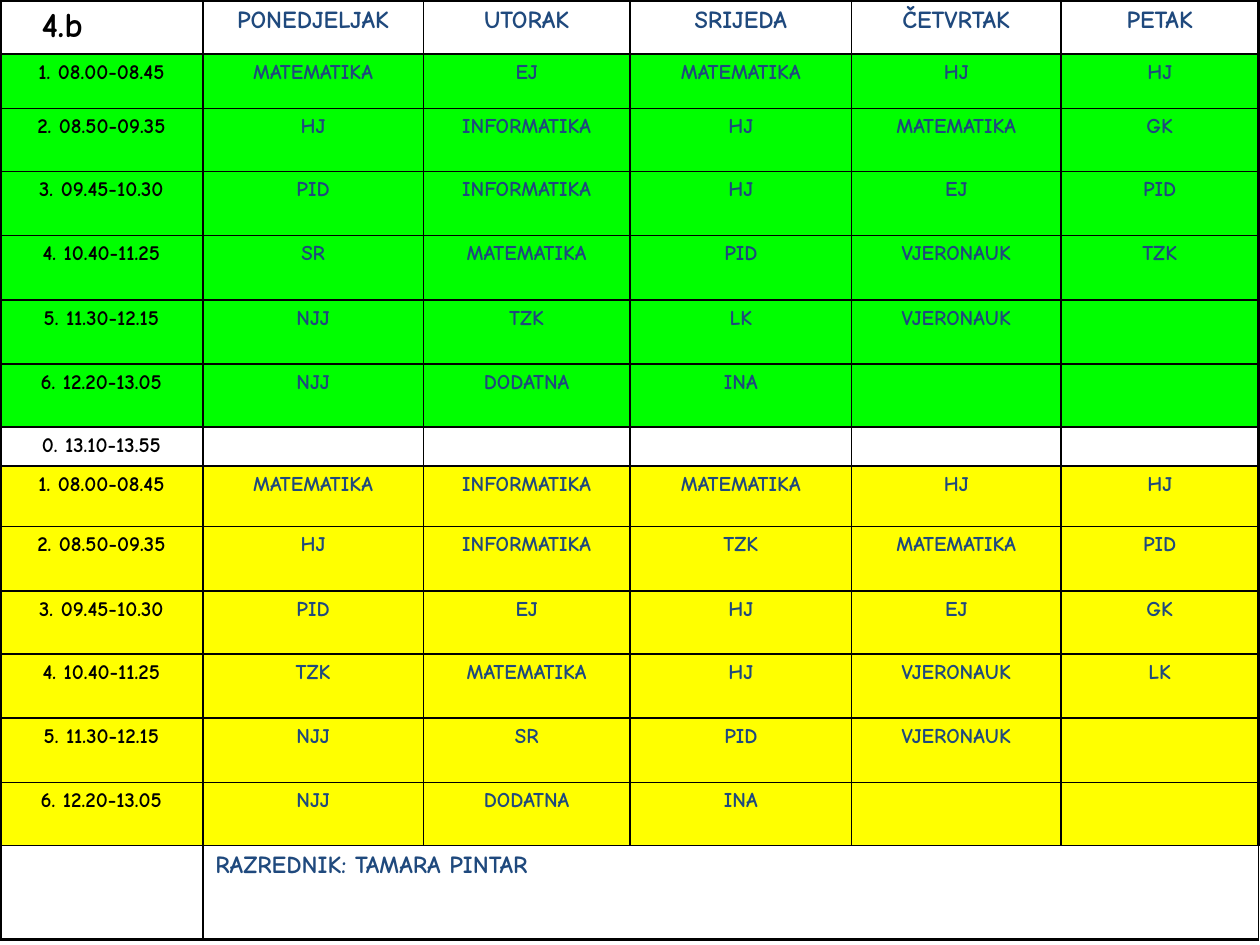
from pptx import Presentation
from pptx.dml.color import RGBColor
from pptx.enum.text import PP_ALIGN as Align
from pptx.oxml.ns import qn
from pptx.util import Inches, Pt
from lxml.etree import SubElement, Element

FONT = "Comic Neue"
COLORS = {"black": "000000", "blue": "1F497D", "green": "00FF00", "yellow": "FFFF00"}
CLASS_NAME = "4.b"
TEACHER = "RAZREDNIK: TAMARA PINTAR"
DAYS = ["PONEDJELJAK", "UTORAK", "SRIJEDA", "ČETVRTAK", "PETAK"]
PERIODS = ["1. 08.00-08.45", "2. 08.50-09.35", "3. 09.45-10.30",
           "4. 10.40-11.25", "5. 11.30-12.15", "6. 12.20-13.05"]
BREAK_PERIOD = "0. 13.10-13.55"
GREEN_WEEK = [
    ["MATEMATIKA", "EJ", "MATEMATIKA", "HJ", "HJ"],
    ["HJ", "INFORMATIKA", "HJ", "MATEMATIKA", "GK"],
    ["PID", "INFORMATIKA", "HJ", "EJ", "PID"],
    ["SR", "MATEMATIKA", "PID", "VJERONAUK", "TZK"],
    ["NJJ", "TZK", "LK", "VJERONAUK", ""],
    ["NJJ", "DODATNA", "INA", "", ""],
]
YELLOW_WEEK = [
    ["MATEMATIKA", "INFORMATIKA", "MATEMATIKA", "HJ", "HJ"],
    ["HJ", "INFORMATIKA", "TZK", "MATEMATIKA", "PID"],
    ["PID", "EJ", "HJ", "EJ", "GK"],
    ["TZK", "MATEMATIKA", "HJ", "VJERONAUK", "LK"],
    ["NJJ", "SR", "PID", "VJERONAUK", ""],
    ["NJJ", "DODATNA", "INA", "", ""],
]
COLUMN_WIDTHS = [1.61, 1.75, 1.64, 1.76, 1.66, 1.57]
ROW_HEIGHTS = [0.43, 0.43, 0.5, 0.51, 0.51, 0.51, 0.5, 0.31,
               0.48, 0.51, 0.5, 0.51, 0.51, 0.5, 0.75]
INNER_LINE, OUTER_LINE = 1, 2.25


def week_rows(week, color):
    return [([period, *lessons], color) for period, lessons in zip(PERIODS, week)]


def set_text(cell, text, size, color, alignment):
    paragraph = cell.text_frame.paragraphs[0]
    paragraph.alignment = alignment
    if not text:
        SubElement(paragraph._p, qn("a:endParaRPr"), sz=str(size * 100))
        return
    paragraph.text = text
    font = paragraph.runs[0].font
    font.name, font.size, font.bold = FONT, Pt(size), True
    font.color.rgb = RGBColor.from_string(COLORS[color])


def set_borders(cell, widths):
    properties = cell._tc.get_or_add_tcPr()
    for position, (side, width) in enumerate(widths.items()):
        line = Element(qn(f"a:ln{side}"), w=str(Pt(width)))
        fill = SubElement(line, qn("a:solidFill"))
        SubElement(fill, qn("a:srgbClr"), val=COLORS["black"])
        properties.insert(position, line)


rows = [([CLASS_NAME, *DAYS], None)]
rows += week_rows(GREEN_WEEK, "green")
rows += [([BREAK_PERIOD] + [""] * len(DAYS), None)]
rows += week_rows(YELLOW_WEEK, "yellow")
rows += [(["", TEACHER] + [""] * (len(DAYS) - 1), None)]
last_row, last_column = len(rows) - 1, len(DAYS)

presentation = Presentation()
presentation.slide_width, presentation.slide_height = Inches(10), Inches(7.5)
slide = presentation.slides.add_slide(presentation.slide_layouts[6])
timetable = slide.shapes.add_table(
    len(rows), len(COLUMN_WIDTHS), 0, 0,
    Inches(sum(COLUMN_WIDTHS)), Inches(sum(ROW_HEIGHTS))).table
timetable.first_row = timetable.horz_banding = False
for column, width in zip(timetable.columns, COLUMN_WIDTHS):
    column.width = Inches(width)
for row, height in zip(timetable.rows, ROW_HEIGHTS):
    row.height = Inches(height)

for row_index, (texts, fill_color) in enumerate(rows):
    for column_index, text in enumerate(texts):
        cell = timetable.cell(row_index, column_index)
        size = 14 if row_index in (0, last_row) else 12
        color = "blue" if column_index else "black"
        alignment = Align.LEFT if text in (CLASS_NAME, TEACHER) else Align.CENTER
        if text == CLASS_NAME:
            size = 20
            cell.margin_left = Inches(0.33)
        set_text(cell, text, size, color, alignment)
        if fill_color:
            cell.fill.solid()
            cell.fill.fore_color.rgb = RGBColor.from_string(COLORS[fill_color])
        else:
            cell.fill.background()
        on_edge = {"L": column_index == 0, "R": column_index == last_column,
                   "T": row_index == 0, "B": row_index == last_row}
        set_borders(cell, {side: OUTER_LINE if outer else INNER_LINE
                           for side, outer in on_edge.items()})

timetable.cell(last_row, 1).merge(timetable.cell(last_row, last_column))
presentation.save("out.pptx")
